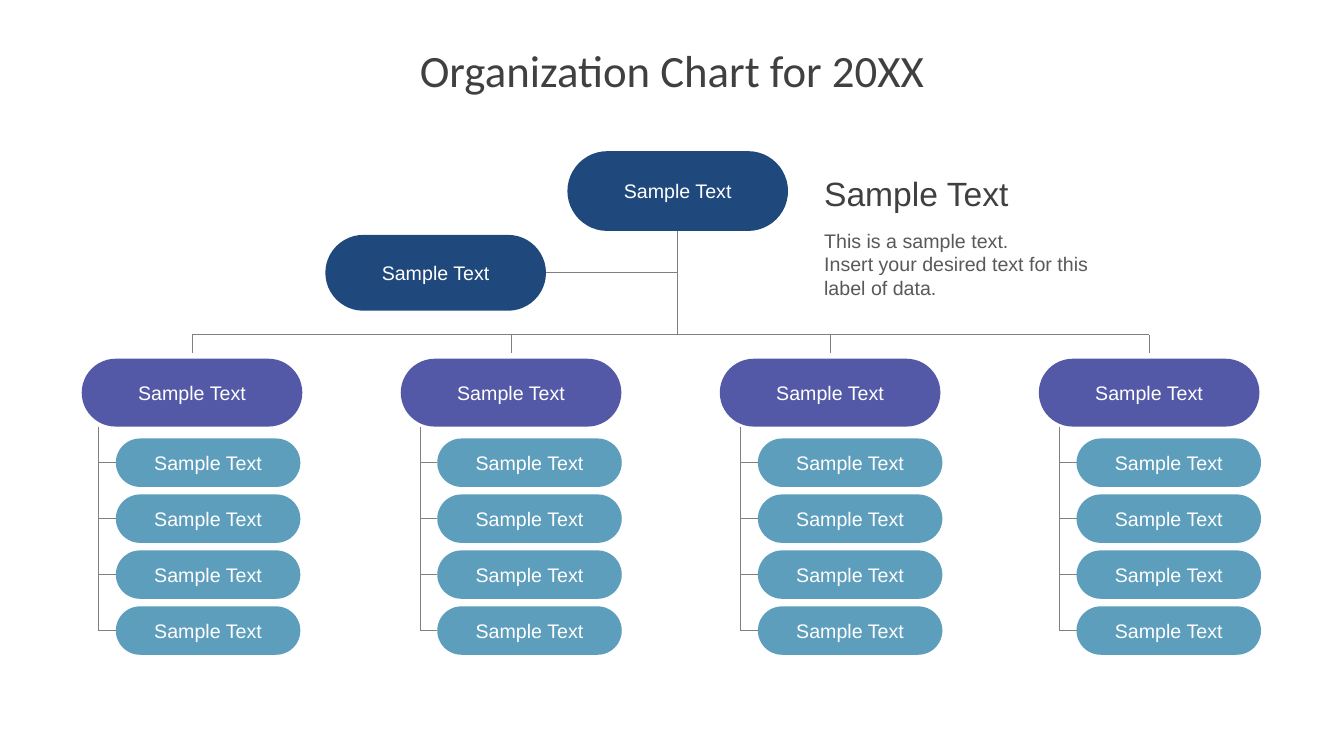
from lxml.etree import SubElement
from pptx import Presentation
from pptx.dml.color import RGBColor as Rgb
from pptx.enum.shapes import MSO_CONNECTOR as Connector, MSO_SHAPE as Preset
from pptx.enum.text import MSO_ANCHOR as Anchor, PP_ALIGN as Align
from pptx.oxml.ns import qn
from pptx.util import Cm, Pt

TITLE = "Organization Chart for 20XX"
CALLOUT_HEADING = ["Sample Text"]
CALLOUT_BODY = ["This is a sample text.", "Insert your desired text for this label of data."]
CHIEF = "Sample Text"
ASSISTANT = "Sample Text"
DEPARTMENTS = [
    {"head": "Sample Text", "members": ["Sample Text"] * 4, "members_left": 2.92},
    {"head": "Sample Text", "members": ["Sample Text"] * 4, "members_left": 11.02},
    {"head": "Sample Text", "members": ["Sample Text"] * 4, "members_left": 19.1},
    {"head": "Sample Text", "members": ["Sample Text"] * 4, "members_left": 27.13},
]

COLORS = {
    "background": "FFFFFF",
    "leader": "1F497D",
    "head": "5359A7",
    "member": "5D9EBC",
    "line": "808080",
    "label": "FFFFFF",
    "heading": "404040",
    "body": "595959",
}
FONTS = {
    "title": {"name": "Calibri", "size": Pt(32)},
    "heading": {"name": "Arial", "size": Pt(24)},
    "text": {"name": "Arial", "size": Pt(14)},
}

CARD_WIDTH = 5.56
CHIEF_BOX = (14.3, 3.81, CARD_WIDTH, 2.01)
ASSISTANT_BOX = (8.2, 5.92, CARD_WIDTH, 1.91)
HEAD_LEFT, HEAD_TOP, HEAD_HEIGHT, HEAD_STEP = 2.06, 9.04, 1.71, 8.04
MEMBER_TOP, MEMBER_WIDTH, MEMBER_HEIGHT, MEMBER_STEP = 11.05, 4.65, 1.22, 1.41
BUS_Y, DROP_END, SPINE_TOP, BRANCH = 8.43, 8.89, 10.77, 0.43


def set_all(target, values):
    for attribute, value in values.items():
        setattr(target, attribute, value)


def write(frame, lines, font, color, align):
    for number, line in enumerate(lines):
        paragraph = frame.paragraphs[0] if number == 0 else frame.add_paragraph()
        paragraph.alignment = align
        run = paragraph.add_run()
        run.text = line
        set_all(run.font, FONTS[font])
        run.font.color.rgb = Rgb.from_string(COLORS[color])


def add_line(x1, y1, x2, y2):
    line = slide.shapes.add_connector(Connector.STRAIGHT, Cm(x1), Cm(y1), Cm(x2), Cm(y2))
    line.line.color.rgb = Rgb.from_string(COLORS["line"])
    line.line.width = Pt(0.75)
    SubElement(line._element.spPr, qn("a:effectLst"))


def add_card(text, box, color):
    card = slide.shapes.add_shape(Preset.ROUNDED_RECTANGLE, *map(Cm, box))
    card.adjustments[0] = 0.5
    card.shadow.inherit = False
    card.fill.solid()
    card.fill.fore_color.rgb = Rgb.from_string(COLORS[color])
    card.line.fill.background()
    set_all(card.text_frame, {"word_wrap": True, "vertical_anchor": Anchor.MIDDLE})
    write(card.text_frame, [text], "text", "label", Align.CENTER)


def add_text(lines, box, font, color, wrap):
    frame = slide.shapes.add_textbox(*map(Cm, box)).text_frame
    frame.word_wrap = wrap
    write(frame, lines, font, color, Align.LEFT)


deck = Presentation()
set_all(deck, {"slide_width": Cm(33.87), "slide_height": Cm(19.05)})
slide = deck.slides.add_slide(deck.slide_layouts[5])
slide.background.fill.solid()
slide.background.fill.fore_color.rgb = Rgb.from_string(COLORS["background"])

title = slide.shapes.title
set_all(title, {"left": Cm(1.7), "top": Cm(0.76), "width": Cm(30.48), "height": Cm(1.98)})
set_all(title.text_frame, {
    "margin_left": 0, "margin_right": 0, "margin_top": Cm(0.18), "margin_bottom": Cm(0.18),
    "vertical_anchor": Anchor.MIDDLE, "word_wrap": True,
})
write(title.text_frame, [TITLE], "title", "heading", Align.CENTER)

head_lefts = [HEAD_LEFT + HEAD_STEP * column for column in range(len(DEPARTMENTS))]
head_centers = [left + CARD_WIDTH / 2 for left in head_lefts]
trunk_x = CHIEF_BOX[0] + CARD_WIDTH / 2
assistant_y = ASSISTANT_BOX[1] + ASSISTANT_BOX[3] / 2

add_line(head_centers[0], BUS_Y, head_centers[-1], BUS_Y)
add_line(trunk_x, CHIEF_BOX[1] + CHIEF_BOX[3], trunk_x, BUS_Y)
add_line(ASSISTANT_BOX[0] + CARD_WIDTH, assistant_y, trunk_x, assistant_y)
add_card(CHIEF, CHIEF_BOX, "leader")
add_card(ASSISTANT, ASSISTANT_BOX, "leader")

for department, head_left, center in zip(DEPARTMENTS, head_lefts, head_centers):
    add_line(center, BUS_Y, center, DROP_END)
    add_card(department["head"], (head_left, HEAD_TOP, CARD_WIDTH, HEAD_HEIGHT), "head")
    member_left = department["members_left"]
    spine_x = member_left - BRANCH
    member_tops = [MEMBER_TOP + MEMBER_STEP * row for row in range(len(department["members"]))]
    add_line(spine_x, SPINE_TOP, spine_x, member_tops[-1] + MEMBER_HEIGHT / 2)
    for member, top in zip(department["members"], member_tops):
        branch_y = top + MEMBER_HEIGHT / 2
        add_line(spine_x, branch_y, member_left, branch_y)
        add_card(member, (member_left, top, MEMBER_WIDTH, MEMBER_HEIGHT), "member")

add_text(CALLOUT_BODY, (20.52, 5.64, 7.19, 2.06), "text", "body", True)
add_text(CALLOUT_HEADING, (20.52, 4.24, 5.21, 1.27), "heading", "heading", False)

deck.save("out.pptx")
